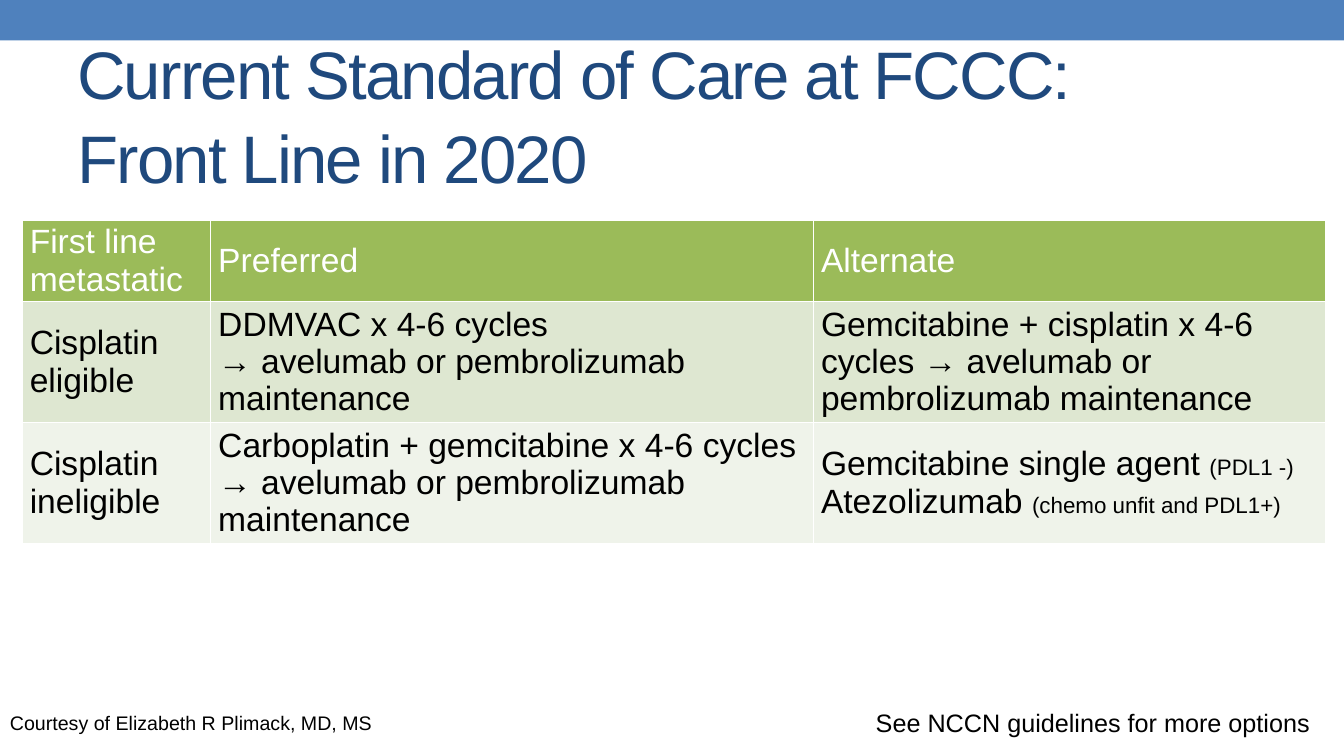
from dataclasses import dataclass

from lxml.etree import SubElement
from pptx import Presentation
from pptx.dml.color import RGBColor
from pptx.enum.shapes import MSO_SHAPE
from pptx.enum.text import MSO_ANCHOR
from pptx.oxml.ns import qn
from pptx.util import Cm, Pt


@dataclass(frozen=True)
class Theme:
    font: str = "Arial"
    band: str = "4F81BD"
    title: str = "1F497D"
    text: str = "000000"
    white: str = "FFFFFF"
    rows: tuple = ("9BBB59", "DEE7D1", "EFF3EA")
    title_size: int = 48
    body_size: int = 24
    note_size: int = 18
    detail_size: int = 16
    credit_size: int = 14


class Deck:
    def __init__(self, theme):
        self.theme = theme
        self.prs = Presentation()
        self.prs.slide_width, self.prs.slide_height = Cm(33.87), Cm(19.05)
        self.s = self.prs.slides.add_slide(self.prs.slide_layouts[6])

    def style(self, p, size, color):
        p.font.name = self.theme.font
        p.font.size = Pt(size)
        p.font.bold = False
        p.font.color.rgb = RGBColor.from_string(color)

    def band(self, height):
        sp = self.s.shapes.add_shape(
            MSO_SHAPE.RECTANGLE, 0, 0, self.prs.slide_width, Cm(height))
        sp.shadow.inherit = False
        sp.fill.solid()
        sp.fill.fore_color.rgb = RGBColor.from_string(self.theme.band)
        sp.line.fill.background()

    def text(self, text, box, size, color, wrap=False,
             anchor=MSO_ANCHOR.TOP, line_spacing=None, tracking=None):
        tf = self.s.shapes.add_textbox(*map(Cm, box)).text_frame
        tf.word_wrap = wrap
        tf.vertical_anchor = anchor
        p = tf.paragraphs[0]
        p.text = text
        p.line_spacing = line_spacing
        self.style(p, size, color)
        if tracking is not None:
            for r in p.runs:
                r.font._element.set("spc", str(tracking))

    def table(self, rows, left, top, widths, heights):
        tbl = self.s.shapes.add_table(
            len(rows), len(widths), Cm(left), Cm(top),
            Cm(sum(widths)), Cm(sum(heights))).table
        for col, width in zip(tbl.columns, widths):
            col.width = Cm(width)
        for i, (row, height) in enumerate(zip(rows, heights)):
            tbl.rows[i].height = Cm(height)
            color = self.theme.text if i else self.theme.white
            for j, lines in enumerate(row):
                self.cell(tbl.cell(i, j), lines, self.theme.rows[i], color)

    def cell(self, cell, lines, fill, color):
        cell.margin_left = cell.margin_right = Cm(0.19)
        cell.margin_top = cell.margin_bottom = 0
        cell.vertical_anchor = MSO_ANCHOR.MIDDLE
        tf = cell.text_frame
        for k, line in enumerate(lines):
            p = tf.add_paragraph() if k else tf.paragraphs[0]
            # A pair is main wording followed by a smaller detail
            main, detail = line if isinstance(line, tuple) else (line, None)
            p.add_run().text = main
            self.style(p, self.theme.body_size, color)
            if detail:
                r = p.add_run()
                r.text = detail
                r.font.size = Pt(self.theme.detail_size)
        # Borders come before the fill in the cell properties
        tc_pr = cell._tc.get_or_add_tcPr()
        for side in ("lnL", "lnR", "lnT", "lnB"):
            ln = SubElement(tc_pr, qn(f"a:{side}"), w=str(Pt(1)))
            solid = SubElement(ln, qn("a:solidFill"))
            SubElement(solid, qn("a:srgbClr"), val=self.theme.white)
        cell.fill.solid()
        cell.fill.fore_color.rgb = RGBColor.from_string(fill)


TREATMENTS = [
    [["First line metastatic"], ["Preferred"], ["Alternate"]],
    [["Cisplatin eligible"],
     ["DDMVAC x 4-6 cycles", "→ avelumab or pembrolizumab maintenance"],
     ["Gemcitabine + cisplatin x 4-6 cycles → avelumab or "
      "pembrolizumab maintenance"]],
    [["Cisplatin ineligible"],
     ["Carboplatin + gemcitabine x 4-6 cycles → avelumab or "
      "pembrolizumab maintenance"],
     [("Gemcitabine single agent ", "(PDL1 -)"),
      ("Atezolizumab ", "(chemo unfit and PDL1+)")]],
]


def main():
    theme = Theme()
    deck = Deck(theme)

    # Top band and title
    deck.band(1.02)
    deck.text("Current Standard of Care at FCCC:\vFront Line in 2020",
              (1.7, 1.47, 30.48, 2.74), theme.title_size, theme.title,
              wrap=True, anchor=MSO_ANCHOR.MIDDLE, line_spacing=1.05,
              tracking=-130)

    # Treatment table
    deck.table(TREATMENTS, 0.56, 5.56, (4.75, 15.19, 12.9),
               (1.88, 2.84, 2.84))

    # Footer notes
    deck.text("See NCCN guidelines for more options",
              (21.82, 17.7, 11.56, 1.02), theme.note_size, theme.text)
    deck.text("Courtesy of Elizabeth R Plimack, MD, MS",
              (0, 17.78, 9.83, 0.85), theme.credit_size, theme.text)

    deck.prs.save("out.pptx")


if __name__ == "__main__":
    main()
